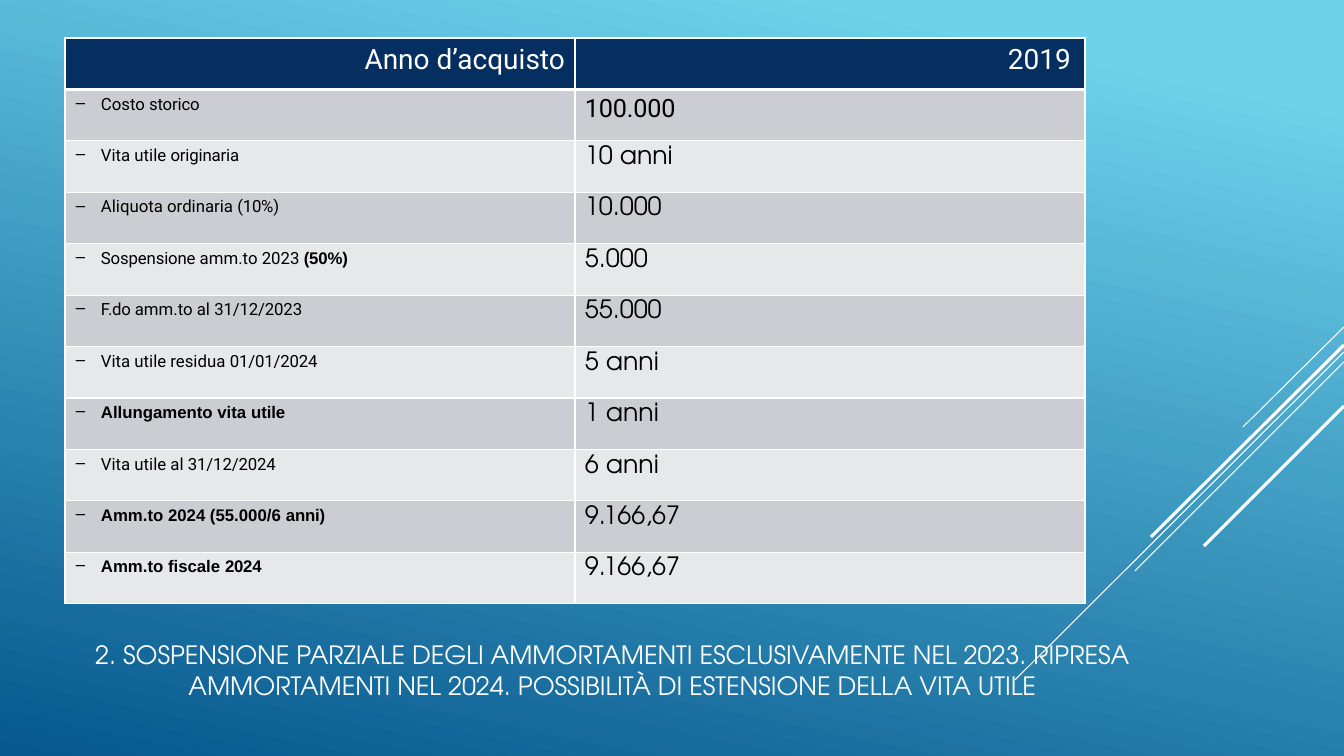
from pptx import Presentation
from pptx.dml.color import RGBColor
from pptx.enum.shapes import MSO_CONNECTOR
from pptx.enum.text import MSO_ANCHOR, PP_ALIGN
from pptx.oxml.ns import qn
from pptx.util import Emu, Pt
from lxml import etree

STRAIGHT = MSO_CONNECTOR.STRAIGHT
MIDDLE = MSO_ANCHOR.MIDDLE
CENTER, RIGHT, LEFT = PP_ALIGN.CENTER, PP_ALIGN.RIGHT, PP_ALIGN.LEFT

WHITE = RGBColor(0xFF, 0xFF, 0xFF)
BLACK = RGBColor(0x00, 0x00, 0x00)
NAVY = RGBColor(0x05, 0x2F, 0x61)
GREY = RGBColor(0xCC, 0xCD, 0xD2)
PALE = RGBColor(0xE7, 0xE8, 0xEA)
SKY = RGBColor(0x6E, 0xD2, 0xEB)
OCEAN = RGBColor(0x06, 0x58, 0x8E)

BODY, DISPLAY, STRONG = "Roboto", "TeX Gyre Adventor", "Arial"

TITLE = ("2. SOSPENSIONE PARZIALE DEGLI AMMORTAMENTI ESCLUSIVAMENTE NEL 2023. "
         "RIPRESA AMMORTAMENTI NEL 2024. POSSIBILITÀ DI ESTENSIONE DELLA VITA UTILE")
RAYS = [(327, 1243, 427, 0.75), (352, 1015, 680, 0.75), (362, 1135, 571, 0.75),
        (345, 1151, 537, 2.25), (406, 1204, 546, 2.25)]
ROWS = [
    ([("Costo", BODY, 0), (" storico", BODY, -10)], "100.000"),
    ([("Vita utile ", BODY, 0), ("originaria", BODY, -10)], "10 anni"),
    ([("Aliquota ordinaria ", BODY, 0), ("(10%)", BODY, -20)], "10.000"),
    ([("Sospensione ", BODY, -10), ("amm.to 2023 ", BODY, 0), ("(50%)", STRONG, -10)], "5.000"),
    ([("F.do ", BODY, -20), ("amm.to al ", BODY, 0), ("31/12/2023", BODY, -10)], "55.000"),
    ([("Vita utile residua ", BODY, 0), ("01/01/2024", BODY, -10)], "5 anni"),
    ([("Allungamento vita ", STRONG, 0), ("utile", STRONG, -10)], "1 anni"),
    ([("Vita utile al ", BODY, 0), ("31/12/2024", BODY, -10)], "6 anni"),
    ([("Amm.to 2024 (55.000/6 ", STRONG, 0), ("anni)", STRONG, -10)], "9.166,67"),
    ([("Amm.to fiscale ", STRONG, 0), ("2024", STRONG, -20)], "9.166,67"),
]


def px(n):
    return Emu(round(n * 914400 / 100.8))


class Deck:
    def __init__(self, prs):
        self.s = prs.slides.add_slide(prs.slide_layouts[5])

    def background(self, start, end):
        fill = self.s.background.fill
        fill.gradient()
        fill.gradient_angle = 258
        for stop, color, position in zip(fill.gradient_stops, (start, end), (0.1, 1)):
            stop.color.rgb = color
            stop.position = position

    def line(self, x1, y1, x2, y2, width):
        c = self.s.shapes.add_connector(STRAIGHT, px(x1), px(y1), px(x2), px(y2))
        c.line.color.rgb = WHITE
        c.line.width = Pt(width)
        etree.SubElement(c._element.spPr, qn("a:effectLst"))

    def run(self, p, text, font, size, color, spacing=0):
        r = p.add_run()
        r.text = text
        r.font.name = font
        r.font.size = Pt(size)
        r.font.bold = font == STRONG
        r.font.color.rgb = color
        r.font._element.set("spc", str(spacing))

    def title(self, text, x, y, w, h):
        sp = self.s.shapes.title
        self.s.shapes.element.append(sp.element)
        sp.left, sp.top, sp.width, sp.height = px(x), px(y), px(w), px(h)
        tf = sp.text_frame
        tf.word_wrap = True
        tf.vertical_anchor = MIDDLE
        p = tf.paragraphs[0]
        p.alignment = CENTER
        p.space_before = Pt(1)
        self.run(p, text, DISPLAY, 18, WHITE)

    def table(self, x, y, w, h, rows, cols):
        shape = self.s.shapes.add_table(rows, cols, px(x), px(y), px(w), px(h))
        for row in shape.table.rows:
            row.height = px(h / rows)
        return shape.table

    def borders(self, cell, top, bottom):
        tcPr = cell._tc.get_or_add_tcPr()
        for side, width in (("L", 1), ("R", 1), ("T", top), ("B", bottom)):
            ln = etree.SubElement(tcPr, qn(f"a:ln{side}"), w=str(Pt(width)))
            fill = etree.SubElement(ln, qn("a:solidFill"))
            etree.SubElement(fill, qn("a:srgbClr"), val=str(WHITE))

    def cell(self, cell, runs, fill, color, align=LEFT, before=0, top=1, bottom=1):
        self.borders(cell, top, bottom)
        cell.fill.solid()
        cell.fill.fore_color.rgb = fill
        cell.margin_left = cell.margin_right = px(10)
        cell.margin_top = cell.margin_bottom = px(5)
        p = cell.text_frame.paragraphs[0]
        p.alignment = align
        p.space_before = Pt(before)
        for text, font, size, spacing in runs:
            self.run(p, text, font, size, color, spacing)
        return p

    def dash(self, p):
        pPr = p._p.get_or_add_pPr()
        pPr.set("marL", str(px(26)))
        pPr.set("indent", str(px(-25)))
        etree.SubElement(pPr, qn("a:buChar"), char="–")


def main():
    prs = Presentation()
    prs.slide_width, prs.slide_height = px(1344), px(756)
    deck = Deck(prs)
    deck.background(SKY, OCEAN)
    for y1, x2, y2, width in RAYS:
        deck.line(1344, y1, x2, y2, width)
    deck.title(TITLE, 77, 633, 1071, 74)

    table = deck.table(65, 38, 1020, 566, len(ROWS) + 1, 2)
    headers = [[("Anno d’acquisto", BODY, 20, 0)],
               [("2019", BODY, 20, 0), (" ", BODY, 12, -40)]]
    for col, runs in enumerate(headers):
        deck.cell(table.cell(0, col), runs, NAVY, WHITE, RIGHT, before=4, bottom=3)
    for i, (label, value) in enumerate(ROWS, 1):
        fill = GREY if i % 2 else PALE
        top = 3 if i == 1 else 1
        runs = [(text, font, 12, spacing) for text, font, spacing in label]
        deck.dash(deck.cell(table.cell(i, 0), runs, fill, BLACK, before=3, top=top))
        font, spacing = (BODY, -10) if i == 1 else (DISPLAY, 0)
        deck.cell(table.cell(i, 1), [(value, font, 18, spacing)], fill, BLACK, top=top)
    prs.save("out.pptx")


if __name__ == "__main__":
    main()
